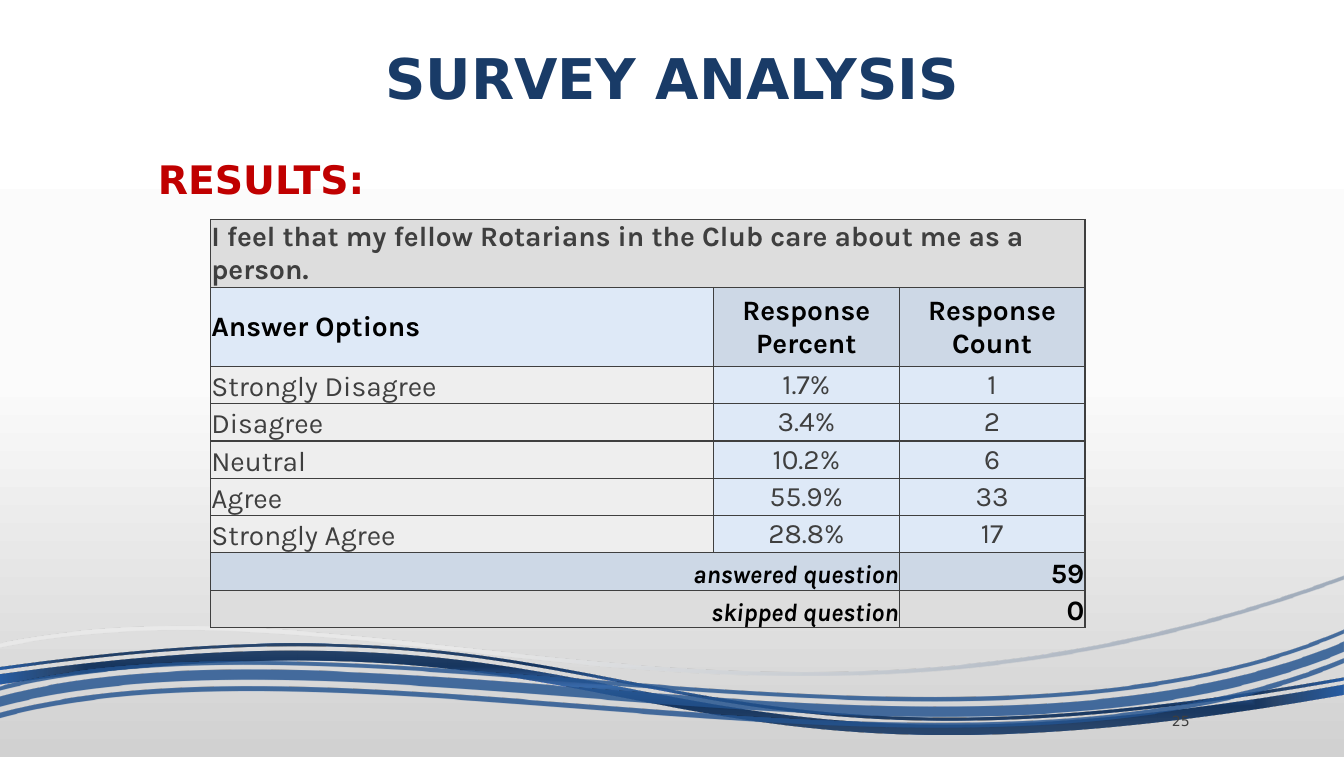
from math import cos, radians, sin

from lxml.etree import SubElement
from pptx import Presentation
from pptx.dml.color import RGBColor
from pptx.enum.text import MSO_ANCHOR as Anchor, PP_ALIGN as Align
from pptx.oxml import parse_xml
from pptx.oxml.ns import nsdecls, qn
from pptx.util import Inches, Pt

COLORS = {
    "navy": "193B67", "red": "C00000", "ink": "3F3F3F", "black": "000000",
    "question": "DDDDDD", "header": "CDD8E6", "value": "DEE9F7", "option": "EEEEEE",
    "white": "FFFFFF", "mist": "FBFBFB", "silver": "D1D1D1",
    "royal": "285EA4", "deep": "17365F", "blue": "23528F",
}

deck = Presentation()
deck.slide_width, deck.slide_height = Inches(13.31), Inches(7.5)
column, row = deck.slide_width / 100, deck.slide_height / 100
slide = deck.slides.add_slide(deck.slide_layouts[6])


def place(left, top, width, height):
    return [int(n) for n in (left * column, top * row, width * column, height * row)]


def paint_gradient(properties, stops, direction):
    gradient = parse_xml(f'<a:gradFill {nsdecls("a")} rotWithShape="1">'
                         f'<a:gsLst/>{direction}</a:gradFill>')
    for share, color, alpha in stops:
        stop = SubElement(gradient[0], qn("a:gs"), pos=str(share * 1000))
        tint = SubElement(stop, qn("a:srgbClr"), val=COLORS[color])
        if alpha < 100:
            SubElement(tint, qn("a:alpha"), val=str(alpha * 1000))
    properties.replace(properties.find(qn("a:solidFill")), gradient)


slide.background.fill.solid()
paint_gradient(slide.element.find(".//" + qn("p:bgPr")),
               [(0, "white", 100), (50, "mist", 100), (100, "silver", 100)],
               '<a:lin ang="5400000" scaled="0"/>')

dark_top = [(0, 6.68), (1.24, 6.51), (2.22, 6.44), (3.05, 6.45),
            (6.69, 6.47), (7.36, 7.82), (13.31, 6.78)]
dark_bottom = [(0, 6.78), (6.66, 5.83), (6.01, 8.16), (13.31, 6.88)]
pale = [(0, 6.37), (3.72, 5.59), (7.52, 7.84), (13.31, 5.7)]
blue_low = [(0, 7.06), (3.48, 6.12), (9.53, 8.1), (13.31, 6.52)]
blue_high = [(0, 6.8), (3.51, 5.89), (9.56, 7.86), (13.31, 6.24)]

waves = [
    ((0.08, 81.6, 99.77, 18),
     [(dark_top, 0, dark_bottom, 0), (dark_top, -0.07, dark_bottom, -0.14)],
     [(0, "royal", 90), (18, "deep", 100), (37, "deep", 90), (100, "royal", 100)],
     '<a:path path="shape"><a:fillToRect l="50000" t="50000" r="50000" b="50000"/></a:path>'),
    ((0.23, 78.4, 100.08, 22.8),
     [(pale, 0, pale, 0.04)],
     [(36, "white", 30), (100, "navy", 48)],
     '<a:lin ang="2700000" scaled="0"/>'),
    ((-0.08, 83.33, 100.15, 15.33),
     [(blue_low, 0, blue_low, 0.05), (blue_low, -0.16, blue_low, -0.06),
      (blue_high, 0, blue_high, 0.04)],
     [(36, "white", 47), (100, "blue", 82)],
     '<a:path path="rect"><a:fillToRect l="100000" t="100000"/></a:path>'),
]
TILT = 3.5
turn_cos, turn_sin = cos(radians(TILT)), sin(radians(TILT))
for area, ribbons, stops, direction in waves:
    left, top, width, height = place(*area)
    builder = slide.shapes.build_freeform(left, top)
    builder.add_line_segments([(left + width, top), (left + width, top + height),
                               (left, top + height)])
    wave = builder.convert_to_shape()
    wave.rotation = 360 - TILT
    wave.shadow.inherit = False
    wave.line.fill.background()
    wave.fill.solid()
    paint_gradient(wave.element.spPr, stops, direction)
    outline = wave.element.spPr.find(".//" + qn("a:pathLst"))[0]
    for corner in list(outline):
        outline.remove(corner)
    for upper, upper_shift, lower, lower_shift in ribbons:
        there = [(x, y + upper_shift) for x, y in upper]
        back = [(x, y + lower_shift) for x, y in reversed(lower)]
        strokes = [("moveTo", there[:1])]
        strokes += [("cubicBezTo", there[n:n + 3]) for n in range(1, len(there), 3)]
        strokes += [("lnTo", back[:1]), ("cubicBezTo", back[1:]), ("close", [])]
        for verb, points in strokes:
            stroke = SubElement(outline, qn(f"a:{verb}"))
            for x, y in points:
                across = Inches(x) - left - width / 2
                down = Inches(y) - top - height / 2
                SubElement(stroke, qn("a:pt"),
                           x=str(int(width / 2 + across * turn_cos - down * turn_sin)),
                           y=str(int(height / 2 + across * turn_sin + down * turn_cos)))

texts = [
    ("SURVEY ANALYSIS", (10.63, 4.47, 78.74, 10.93), 40, "navy", True, Align.CENTER, Anchor.BOTTOM, 0.1),
    ("RESULTS:", (10.63, 20.55, 78.74, 63.87), 28, "red", True, Align.LEFT, Anchor.TOP, 0.15),
    ("25", (80.54, 93.4, 8.72, 4), 10, "ink", False, Align.RIGHT, Anchor.MIDDLE, 0.1),
]
for words, area, size, color, bold, align, anchor, inset in texts:
    frame = slide.shapes.add_textbox(*place(*area)).text_frame
    frame.word_wrap = True
    frame.vertical_anchor = anchor
    frame.margin_left = Inches(inset)
    frame.text = words
    line = frame.paragraphs[0]
    line.alignment = align
    line.line_spacing = 0.9
    font = line.runs[0].font
    font.name, font.size, font.bold = "DejaVu Sans", Pt(size), bold
    font.color.rgb = RGBColor.from_string(COLORS[color])

answers = [
    ("I feel that my fellow Rotarians in the Club care about me as a person.", "", ""),
    ("Answer Options", "Response Percent", "Response Count"),
    ("Strongly Disagree", "1.7%", "1"),
    ("Disagree", "3.4%", "2"),
    ("Neutral", "10.2%", "6"),
    ("Agree", "55.9%", "33"),
    ("Strongly Agree", "28.8%", "17"),
    ("answered question", "", "59"),
    ("skipped question", "", "0"),
]
fills = ([("question",) * 3, ("value", "header", "header")]
         + [("option", "value", "value")] * 5
         + [("header",) * 3, ("question",) * 3])
survey = slide.shapes.add_table(len(answers), 3, *place(15.67, 29, 65.06, 53.6)).table
survey.first_row = survey.horz_banding = False
for part, share in zip(survey.columns, (37.42, 13.82, 13.82)):
    part.width = int(share * column)
for part, share in zip(survey.rows, [8.67, 10.4] + [4.93] * 7):
    part.height = int(share * row)
survey.cell(0, 0).merge(survey.cell(0, 2))
for total in (7, 8):
    survey.cell(total, 0).merge(survey.cell(total, 1))

for r, answer in enumerate(answers):
    for c, words in enumerate(answer):
        cell = survey.cell(r, c)
        is_total, is_option = r > 6, 1 < r < 7
        cell.margin_left = cell.margin_right = cell.margin_top = Pt(0.5)
        cell.margin_bottom = 0
        cell.vertical_anchor = Anchor.BOTTOM if is_total or (is_option and c == 0) else Anchor.MIDDLE
        cell.fill.solid()
        cell.fill.fore_color.rgb = RGBColor.from_string(COLORS[fills[r][c]])
        properties = cell._tc.get_or_add_tcPr()
        for order, side in enumerate(("lnL", "lnR", "lnT", "lnB")):
            border = SubElement(properties, qn(f"a:{side}"), w=str(Pt(1)))
            SubElement(SubElement(border, qn("a:solidFill")), qn("a:srgbClr"), val=COLORS["ink"])
            properties.insert(order, border)
        if not words:
            continue
        cell.text_frame.text = words
        line = cell.text_frame.paragraphs[0]
        line.alignment = Align.RIGHT if is_total else Align.CENTER if c else Align.LEFT
        font = line.runs[0].font
        font.name, font.bold = "Karla", not is_option
        font.italic = is_total and c == 0
        font.size = Pt(18 if font.italic else 20)
        font.color.rgb = RGBColor.from_string(COLORS["black" if is_total or r == 1 else "ink"])

deck.save("out.pptx")
